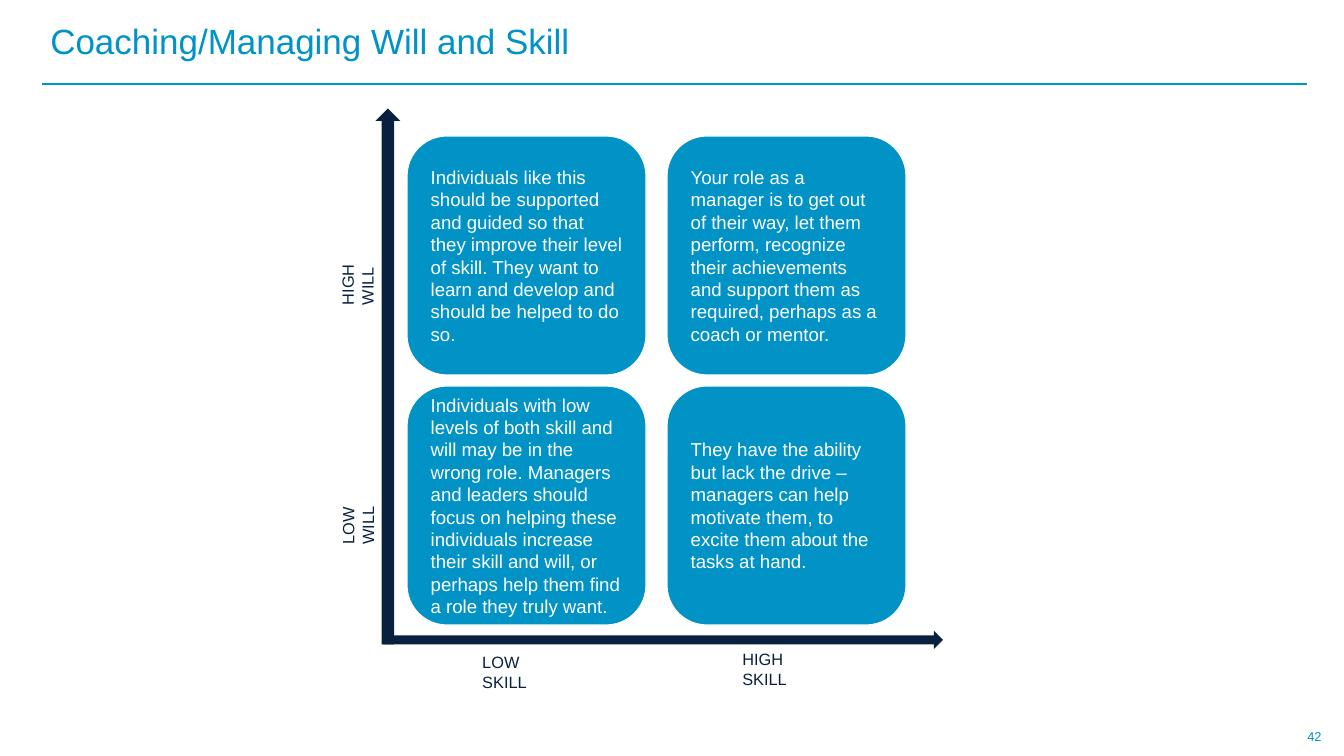
from dataclasses import dataclass

from lxml import etree
from pptx import Presentation
from pptx.dml.color import RGBColor
from pptx.enum.shapes import MSO_CONNECTOR, MSO_SHAPE
from pptx.enum.text import MSO_ANCHOR, PP_ALIGN
from pptx.oxml.ns import qn
from pptx.util import Pt

EMU_PER_PX = 914400 / 84
STRAIGHT = MSO_CONNECTOR.STRAIGHT
ROUNDED = MSO_SHAPE.ROUNDED_RECTANGLE
ARROW = MSO_SHAPE.RIGHT_ARROW
TOP, MIDDLE = MSO_ANCHOR.TOP, MSO_ANCHOR.MIDDLE
LEFT, CENTER = PP_ALIGN.LEFT, PP_ALIGN.CENTER

FONT = "Arial"
BLUE, NAVY, WHITE = "0193C7", "09213F", "FFFFFF"
CARD_FILL, RULE_COLOR = "0192C6", "0093C7"

CARD_LEFT, CARD_TOP, CARD_SIZE = 407, 136, 239
CARD_PITCH_X, CARD_PITCH_Y = 260, 250
CARD_INSET = 12


@dataclass(frozen=True)
class Box:
    left: int
    top: int
    width: int
    height: int
    rotation: int = 0


@dataclass(frozen=True)
class Label:
    text: str
    box: Box
    size: int = 14
    color: str = NAVY
    anchor: MSO_ANCHOR = TOP
    align: PP_ALIGN = LEFT
    line_spacing: float = 1.0


LABELS = [
    Label("42", Box(1285, 716, 59, 40), 11, BLUE, MIDDLE, CENTER),
    Label("Coaching/Managing Will and Skill", Box(42, 20, 1027, 47), 30, BLUE, MIDDLE,
          line_spacing=0.9),
    Label("LOW WILL", Box(301, 491, 95, 29, 270)),
    Label("HIGH WILL", Box(299, 250, 98, 29, 270)),
    Label("LOW SKILL", Box(474, 648, 100, 29)),
    Label("HIGH SKILL", Box(734, 645, 104, 29)),
]

QUADRANTS = [
    [
        "Individuals like this should be supported and guided so that they improve "
        "their level of skill. They want to learn and develop and should be helped to do so.",
        "Your role as a manager is to get out of their way, let them perform, recognize "
        "their achievements and support them as required, perhaps as a coach or mentor.",
    ],
    [
        "Individuals with low levels of both skill and will may be in the wrong role. "
        "Managers and leaders should focus on helping these individuals increase their "
        "skill and will, or perhaps help them find a role they truly want.",
        "They have the ability but lack the drive – managers can help motivate them, "
        "to excite them about the tasks at hand.",
    ],
]

AXES = [Box(383, 631, 560, 18), Box(120, 364, 536, 25, 270)]


def px(length: int) -> int:
    return round(length * EMU_PER_PX)


def rgb(color: str) -> RGBColor:
    return RGBColor.from_string(color)


def place(box: Box) -> tuple[int, int, int, int]:
    return px(box.left), px(box.top), px(box.width), px(box.height)


def write(frame, text: str, size: int, color: str, anchor: MSO_ANCHOR, align: PP_ALIGN,
          line_spacing: float = 1.0) -> None:
    frame.text = text
    frame.word_wrap = True
    frame.vertical_anchor = anchor
    paragraph = frame.paragraphs[0]
    paragraph.alignment = align
    paragraph.line_spacing = line_spacing
    font = paragraph.runs[0].font
    font.name = FONT
    font.size = Pt(size)
    font.color.rgb = rgb(color)


def add_rule(slide, left: int, right: int, y: int) -> None:
    rule = slide.shapes.add_connector(STRAIGHT, px(left), px(y), px(right), px(y))
    rule.line.color.rgb = rgb(RULE_COLOR)
    rule.line.width = Pt(1.5)
    etree.SubElement(rule._element.spPr, qn("a:effectLst"))


def add_label(slide, label: Label) -> None:
    text_box = slide.shapes.add_textbox(*place(label.box))
    text_box.rotation = label.box.rotation
    write(text_box.text_frame, label.text, label.size, label.color, label.anchor,
          label.align, label.line_spacing)


def add_card(slide, text: str, row: int, column: int) -> None:
    box = Box(CARD_LEFT + column * CARD_PITCH_X, CARD_TOP + row * CARD_PITCH_Y,
              CARD_SIZE, CARD_SIZE)
    card = slide.shapes.add_shape(ROUNDED, *place(box))
    card.shadow.inherit = False
    card.fill.solid()
    card.fill.fore_color.rgb = rgb(CARD_FILL)
    card.line.color.rgb = rgb(WHITE)
    card.line.width = Pt(1)
    frame = card.text_frame
    frame.margin_left = frame.margin_right = px(CARD_INSET)
    frame.margin_top = frame.margin_bottom = px(CARD_INSET)
    write(frame, text, 16, WHITE, MIDDLE, LEFT)


def add_axis(slide, box: Box) -> None:
    axis = slide.shapes.add_shape(ARROW, *place(box))
    axis.rotation = box.rotation
    axis.shadow.inherit = False
    axis.fill.solid()
    axis.fill.fore_color.rgb = rgb(NAVY)
    axis.line.fill.background()


def main() -> None:
    deck = Presentation()
    deck.slide_width, deck.slide_height = px(1344), px(756)
    slide = deck.slides.add_slide(deck.slide_layouts[6])
    add_rule(slide, 42, 1307, 84)
    for row, texts in enumerate(QUADRANTS):
        for column, text in enumerate(texts):
            add_card(slide, text, row, column)
    for label in LABELS:
        add_label(slide, label)
    for axis in AXES:
        add_axis(slide, axis)
    deck.save("out.pptx")


if __name__ == "__main__":
    main()
